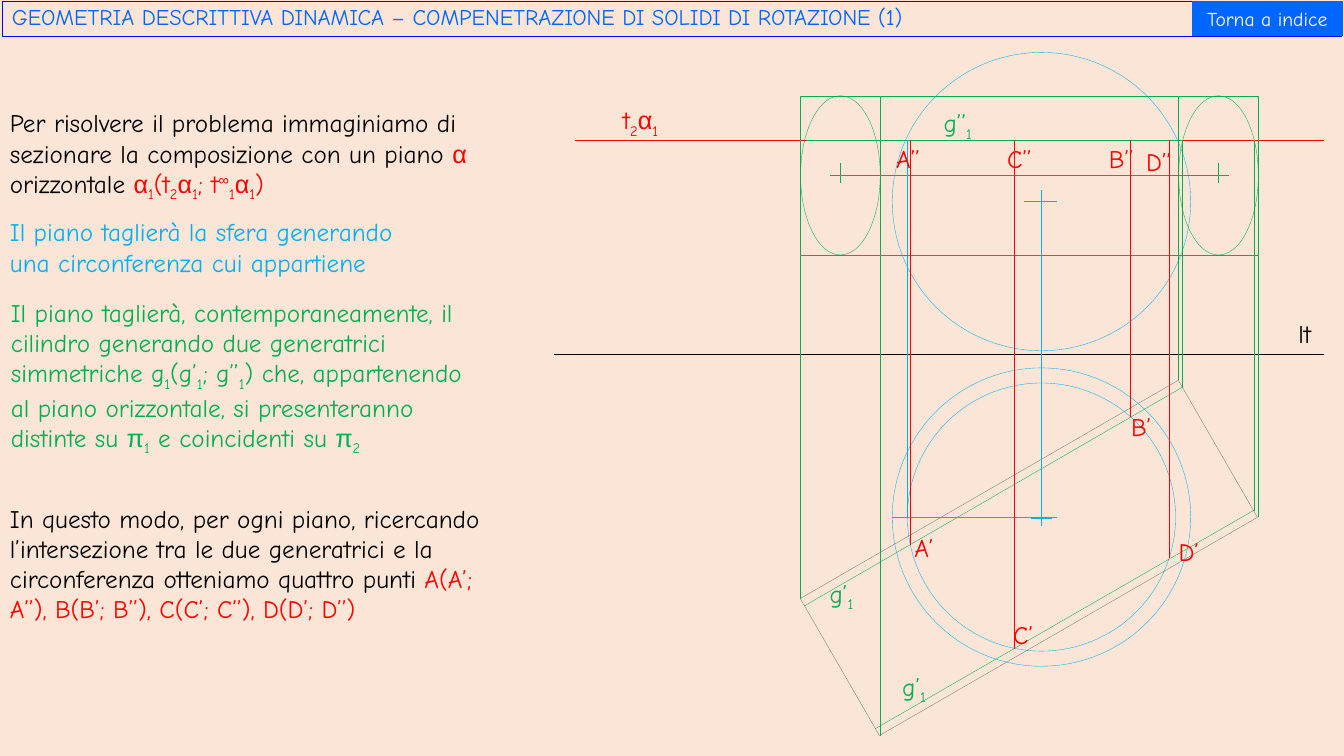
"""Builds the slide on the intersection of a sphere and a cylinder."""
import pptx
import pptx.dml.color
import pptx.enum.shapes
import pptx.enum.text
import pptx.oxml.ns
import pptx.util
from pptx.util import Inches

SHAPE = pptx.enum.shapes.MSO_SHAPE
ALIGN = pptx.enum.text.PP_ALIGN
FONT, GREEK_FONT = "Comic Neue", "Arial"
BLACK, RED, GREEN, BLUE = "000000", "FF0000", "00B050", "00B0F0"
GREY, NAVY, ROYAL, WHITE, PEACH = "7C7C7C", "0000FF", "0066FF", "FFFFFF", "FBE5D6"

TITLE = "GEOMETRIA DESCRITTIVA DINAMICA – COMPENETRAZIONE DI SOLIDI DI ROTAZIONE (1)"
BUTTON = "Torna a indice"

# Pieces starting with "_" are subscripts, with "^" superscripts.
PARAGRAPHS = [
    ((0, 1.02, 5.42, 1.01), [
        (BLACK, ["Per risolvere il problema immaginiamo di sezionare la composizione con un piano "]),
        (RED, ["α"]),
        (BLACK, [" orizzontale "]),
        (RED, ["α", "_1", "(t", "_2", "α", "_1", "; t", "^∞", "_1", "α", "_1", ")"])]),
    ((0, 2.1, 4.41, 0.71), [
        (BLUE, ["Il piano taglierà la sfera generando una circonferenza cui appartiene"])]),
    ((0.01, 2.9, 4.87, 1.92), [
        (GREEN, ["Il piano taglierà, contemporaneamente, il cilindro generando due generatrici simmetriche g",
                 "_1", "(g’", "_1", "; g’’", "_1",
                 ") che, appartenendo al piano orizzontale, si presenteranno distinte su ",
                 "π", "_1", " e coincidenti su ", "π", "_2"])]),
    ((0, 4.94, 5.22, 1.31), [
        (BLACK, ["In questo modo, per ogni piano, ricercando l’intersezione tra le due generatrici"
                 " e la circonferenza otteniamo quattro punti "]),
        (RED, ["A(A’; A’’), B(B’; B’’), C(C’; C’’), D(D’; D’’)"])]),
]
LABELS = [
    ((12.78, 3.11, 0.56), BLACK, ["lt"]),
    ((6.08, 0.99, 0.69), RED, ["t", "_2", "α", "_1"]),
    ((8.13, 5.69, 0.53), GREEN, ["g’", "_1"]),
    ((8.85, 6.61, 0.53), GREEN, ["g’", "_1"]),
    ((9.26, 1.02, 0.53), GREEN, ["g’’", "_1"]),
]
POINTS = [
    ("A", 9.03, 5.41, (8.97, 5.23), (8.79, 1.37)),
    ("B", 11.21, 4.14, (11.12, 4.03), (10.9, 1.37)),
    ("C", 10.06, 6.44, (9.95, 6.09), (9.89, 1.37)),
    ("D", 11.6, 5.54, (11.59, 5.27), (11.27, 1.4)),
]

GROUND_Y, PLANE_Y, RIGHT = 3.51, 1.39, 13.13
CENTER_X, SPHERE_TOP_Y, SPHERE_PLAN_Y = 10.33, 2, 5.13
SPHERE_R, SECTION_R = 1.48, 1.33
CYL_TOP, CYL_BOTTOM, CYL_AXIS, END_W = 0.95, 2.53, 1.74, 0.79
CYL_EDGES = [(7.94, 5.94), (8.73, 7.3), (11.69, 3.77), (12.48, 5.13)]
CYL_LEFT, CYL_RIGHT = CYL_EDGES[0][0], CYL_EDGES[-1][0]
END_LEFTS = [CYL_LEFT, CYL_EDGES[2][0]]

LINES = [
    (5.49, GROUND_Y, RIGHT, GROUND_Y, BLACK),
    (5.7, PLANE_Y, RIGHT, PLANE_Y, RED),
    (7.99, PLANE_Y, 11.73, PLANE_Y, GREEN),
    (11.73, PLANE_Y, 11.73, 3.85, GREEN),
    (12.44, PLANE_Y, 12.44, 5.07, GREEN),
    (7.98, 6.01, 11.73, 3.84, GREEN),
    (8.68, 7.23, 12.44, 5.06, GREEN),
    (8.3, CYL_AXIS, 12.17, CYL_AXIS, GREEN),
    (10.16, SPHERE_TOP_Y, 10.48, SPHERE_TOP_Y, BLUE),
    (CENTER_X, 1.89, CENTER_X, 5.22, BLUE),
    (8.85, SPHERE_PLAN_Y, 10.48, SPHERE_PLAN_Y, BLUE),
    (10.23, 5.14, 10.43, 5.14, BLUE),
    (9, PLANE_Y, 9, SPHERE_PLAN_Y, BLUE),
]
LINES += [(CYL_LEFT, y, CYL_RIGHT, y, GREEN) for y in (CYL_TOP, CYL_BOTTOM)]
LINES += [(x, CYL_TOP, x, y, GREEN) for x, y in CYL_EDGES]
for left in END_LEFTS:
    mid = left + END_W / 2
    LINES += [(mid, 1.62, mid, 1.82, GREEN), (mid - 0.1, CYL_AXIS, mid + 0.1, CYL_AXIS, GREEN)]
LINES += [(x, PLANE_Y, x, y, RED) for _, x, y, _, _ in POINTS]


def rgb(value):
    return pptx.dml.color.RGBColor.from_string(value)


def add_line(x1, y1, x2, y2, color):
    cn = slide.shapes.add_connector(pptx.enum.shapes.MSO_CONNECTOR.STRAIGHT,
                                    Inches(x1), Inches(y1), Inches(x2), Inches(y2))
    cn.line.color.rgb = rgb(color)
    cn.line.width = pptx.util.Pt(0.25)
    sp_pr = cn._element.spPr
    sp_pr.append(sp_pr.makeelement(pptx.oxml.ns.qn("a:effectLst"), {}))


def add_shape(kind, box, line=None, fill=None):
    sp = slide.shapes.add_shape(kind, *map(Inches, box))
    sp.shadow.inherit = False
    if fill:
        sp.fill.solid()
        sp.fill.fore_color.rgb = rgb(fill)
    else:
        sp.fill.background()
    if line:
        sp.line.color.rgb = rgb(line)
        sp.line.width = pptx.util.Pt(0.25)
    else:
        sp.line.fill.background()
    return sp


def add_circle(y, radius):
    add_shape(SHAPE.OVAL, (CENTER_X - radius, y - radius, 2 * radius, 2 * radius), BLUE)


def write(sp, groups, size=18, align=ALIGN.LEFT):
    tf = sp.text_frame
    tf.word_wrap = True
    p = tf.paragraphs[0]
    p.alignment = align
    for color, pieces in groups:
        for piece in pieces:
            text = piece.lstrip("_^")
            r = p.add_run()
            r.text = text
            r.font.size = pptx.util.Pt(size)
            r.font.name = GREEK_FONT if text in "απ∞" else FONT
            r.font.color.rgb = rgb(color)
            if text != piece:
                r.font._element.set("baseline", "-25000" if piece[0] == "_" else "30000")
    return p


def add_text(box, groups):
    write(slide.shapes.add_textbox(*map(Inches, box)), groups)


prs = pptx.Presentation()
prs.slide_width, prs.slide_height = Inches(13.33), Inches(7.5)
slide = prs.slides.add_slide(prs.slide_layouts[6])
slide.background.fill.solid()
slide.background.fill.fore_color.rgb = rgb(PEACH)

add_shape(SHAPE.RECTANGLE, (8.04, 4.75, 4.33, 1.57), GREY).rotation = 330
add_circle(SPHERE_TOP_Y, SPHERE_R)
add_circle(SPHERE_PLAN_Y, SPHERE_R)
add_circle(SPHERE_PLAN_Y, SECTION_R)
for left in END_LEFTS:
    add_shape(SHAPE.OVAL, (left, CYL_TOP, END_W, CYL_BOTTOM - CYL_TOP), GREEN)
for line in LINES:
    add_line(*line)

for box, groups in PARAGRAPHS:
    add_text(box, groups)
for box, color, pieces in LABELS:
    add_text((*box, 0.4), [(color, pieces)])
for name, _, _, plan, front in POINTS:
    for mark, at in (("’", plan), ("’’", front)):
        add_text((*at, 0.51, 0.4), [(RED, [name + mark])])

header = add_shape(SHAPE.RECTANGLE, (0.02, 0.01, 13.28, 0.35), NAVY)
write(header, [(ROYAL, [TITLE])], 16).line_spacing = 0.9
button = add_shape(SHAPE.ACTION_BUTTON_CUSTOM, (11.82, 0.01, 1.5, 0.35), fill=ROYAL)
write(button, [(WHITE, [BUTTON])], 14, ALIGN.CENTER)

prs.save("out.pptx")
